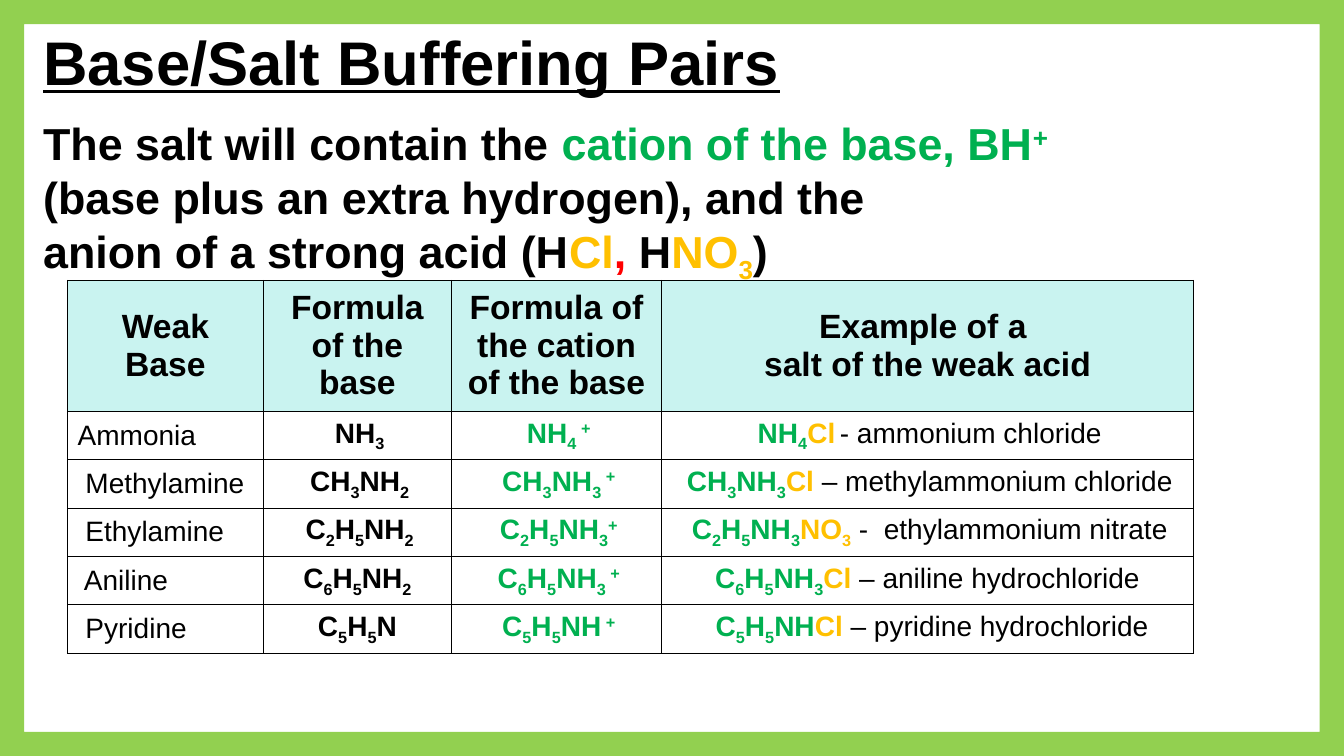
from dataclasses import dataclass
from itertools import groupby

from lxml import etree
from pptx import Presentation
from pptx.dml.color import RGBColor
from pptx.enum.shapes import MSO_SHAPE
from pptx.enum.text import MSO_ANCHOR, PP_ALIGN
from pptx.oxml.ns import qn
from pptx.util import Inches, Pt

FRAME = MSO_SHAPE.FRAME
MIDDLE, TOP = MSO_ANCHOR.MIDDLE, MSO_ANCHOR.TOP
LEFT, CENTER = PP_ALIGN.LEFT, PP_ALIGN.CENTER
BLACK, WHITE, GREEN, GOLD, RED = "000000", "FFFFFF", "00B050", "FFC000", "FF0000"
HEADER_FILL, BORDER_GREEN = "C9F3F0", "92D050"
SUB, SUPER = -25, 30


@dataclass
class Piece:
    text: str
    color: str = BLACK
    bold: bool = True
    baseline: int = 0


@dataclass
class BufferPair:
    name: str
    base: str
    cation: str
    salt_cation: str
    salt_anion: str
    salt_name: str


def rgb(value: str) -> RGBColor:
    return RGBColor.from_string(value)


def char_baseline(char: str) -> int:
    if char == "+":
        return SUPER
    return SUB if char.isdigit() or char == " " else 0


def formula(text: str, color: str = BLACK) -> list[Piece]:
    return [Piece("".join(chars), color, True, baseline)
            for baseline, chars in groupby(text, char_baseline)]


def write(frame, pieces: list[Piece], *, size: int, align=LEFT, underline: bool = False) -> None:
    paragraph = frame.paragraphs[0]
    paragraph.alignment = align
    for piece in pieces:
        for index, line in enumerate(piece.text.split("\n")):
            if index:
                paragraph.add_line_break()
            if not line:
                continue
            run = paragraph.add_run()
            run.text = line
            font = run.font
            font.name, font.size = "Arial", Pt(size)
            font.bold, font.underline = piece.bold, underline
            font.color.rgb = rgb(piece.color)
            if piece.baseline:
                font._element.set("baseline", str(piece.baseline * 1000))
    for line_break in paragraph._p.findall(qn("a:br")):
        properties = etree.SubElement(line_break, qn("a:rPr"))
        properties.set("sz", str(size * 100))


def add_text(slide, box: tuple[float, ...], pieces: list[Piece], *, anchor=TOP, **text_format) -> None:
    frame = slide.shapes.add_textbox(*map(Inches, box)).text_frame
    frame.word_wrap = True
    frame.vertical_anchor = anchor
    write(frame, pieces, **text_format)


def fill_cell(cell, pieces: list[Piece], fill: str, **text_format) -> None:
    cell.vertical_anchor = MIDDLE
    cell.fill.solid()
    cell.fill.fore_color.rgb = rgb(fill)
    write(cell.text_frame, pieces, **text_format)
    properties = cell._tc.get_or_add_tcPr()
    for index, side in enumerate(("lnL", "lnR", "lnT", "lnB")):
        line = etree.Element(qn(f"a:{side}"), w=str(Pt(0.75)))
        solid = etree.SubElement(line, qn("a:solidFill"))
        etree.SubElement(solid, qn("a:srgbClr"), val=BLACK)
        properties.insert(index, line)


HEADERS = ["Weak\nBase", "Formula of the base", "Formula of the cation of the base",
           "Example of a \nsalt of the weak acid"]
PAIRS = [
    BufferPair("Ammonia ", " NH3", " NH4 +", " NH4", "Cl ", "- ammonium chloride"),
    BufferPair(" Methylamine", " CH3NH2", " CH3NH3 +", " CH3NH3", "Cl", " – methylammonium chloride"),
    BufferPair(" Ethylamine", " C2H5NH2", " C2H5NH3+", " C2H5NH3", "NO3", " -  ethylammonium nitrate"),
    BufferPair(" Aniline", " C6H5NH2 ", " C6H5NH3 +", "C6H5NH3", "Cl", " – aniline hydrochloride"),
    BufferPair(" Pyridine", " C5H5N ", " C5H5NH +", "  C5H5NH", "Cl", " – pyridine hydrochloride"),
]
COLUMN_WIDTHS = [1.94, 1.87, 2.08, 5.28]
HEADER_HEIGHT, ROW_HEIGHT = 1.3, 0.48


def add_pairs_table(slide) -> None:
    height = HEADER_HEIGHT + ROW_HEIGHT * len(PAIRS)
    table = slide.shapes.add_table(
        len(PAIRS) + 1, len(HEADERS), Inches(0.67), Inches(2.78),
        Inches(sum(COLUMN_WIDTHS)), Inches(height)).table
    table.first_row = table.horz_banding = False
    for column, width in zip(table.columns, COLUMN_WIDTHS):
        column.width = Inches(width)
    for index, row in enumerate(table.rows):
        row.height = Inches(ROW_HEIGHT if index else HEADER_HEIGHT)
    for column, header in enumerate(HEADERS):
        fill_cell(table.cell(0, column), [Piece(header)], HEADER_FILL, size=24, align=CENTER)
    for row, pair in enumerate(PAIRS, start=1):
        salt = [*formula(pair.salt_cation, GREEN), *formula(pair.salt_anion, GOLD),
                Piece(pair.salt_name, bold=False)]
        contents = [[Piece(pair.name, bold=False)], formula(pair.base),
                    formula(pair.cation, GREEN), salt]
        for column, pieces in enumerate(contents):
            fill_cell(table.cell(row, column), pieces, WHITE, size=20,
                      align=CENTER if column else LEFT)


def add_border(slide, width: int, height: int) -> None:
    border = slide.shapes.add_shape(FRAME, 0, 0, width, height)
    border.adjustments[0] = 0.032
    border.shadow.inherit = False
    border.fill.solid()
    border.fill.fore_color.rgb = rgb(BORDER_GREEN)
    border.line.fill.background()


def main() -> None:
    presentation = Presentation()
    presentation.slide_width = Inches(13.33)
    presentation.slide_height = Inches(7.5)
    slide = presentation.slides.add_slide(presentation.slide_layouts[6])
    add_text(slide, (0.33, 0.31, 9, 0.58), [Piece("Base/Salt Buffering Pairs")],
             anchor=MIDDLE, size=44, underline=True)
    add_text(slide, (0.33, 1.1, 12.83, 1.72), [
        Piece("The salt will contain the "),
        Piece("cation of the base, BH", GREEN),
        Piece("+ \n", GREEN, baseline=SUPER),
        Piece("(base plus an extra hydrogen), and the \nanion of a strong acid (H"),
        Piece("Cl", GOLD),
        Piece(", ", RED),
        Piece("H"),
        *formula("NO3", GOLD),
        Piece(")"),
    ], size=32)
    add_pairs_table(slide)
    add_border(slide, presentation.slide_width, presentation.slide_height)
    presentation.save("out.pptx")


if __name__ == "__main__":
    main()
